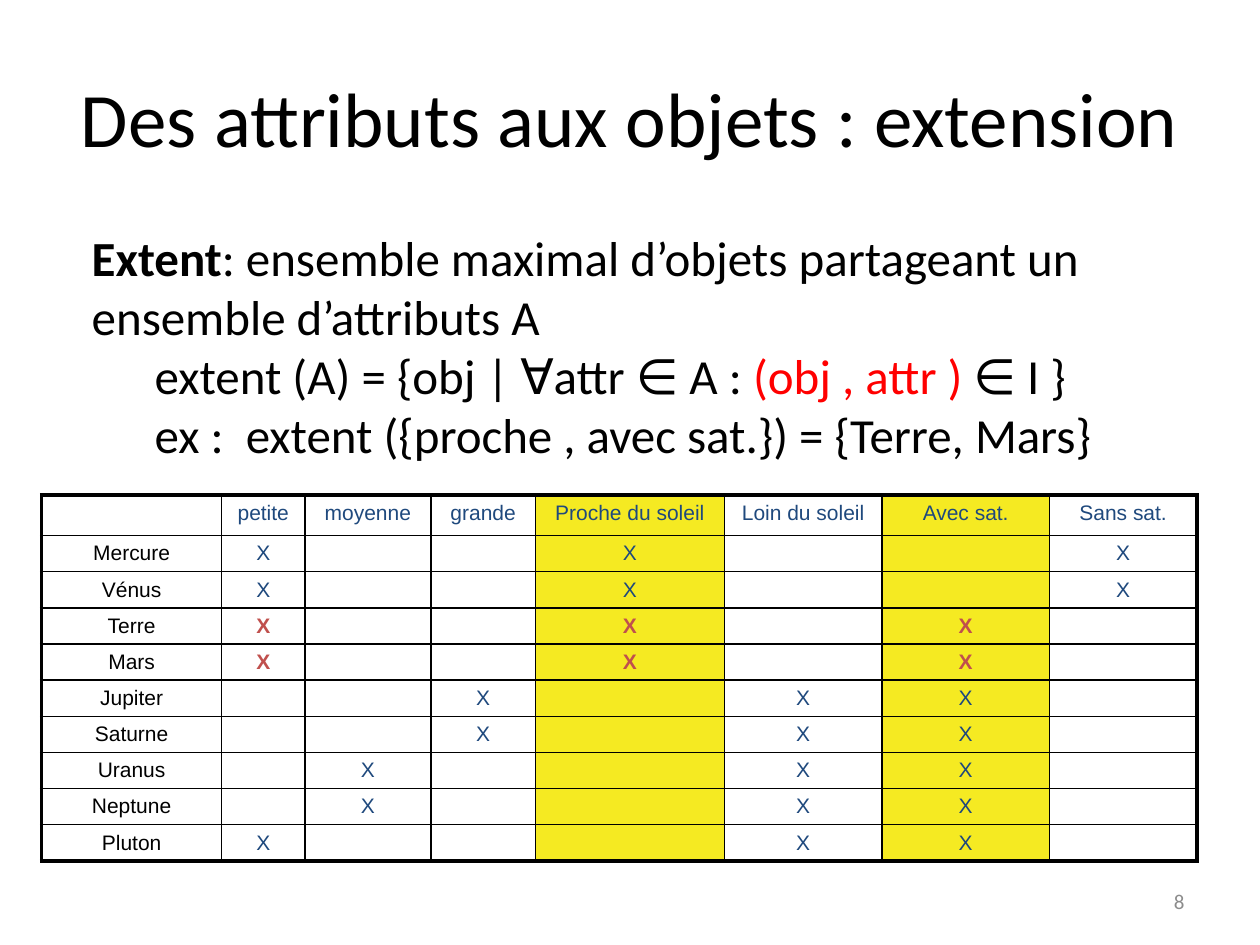
"""Build the slide on extension: from attributes to objects."""
from dataclasses import dataclass

from lxml import etree
from pptx import Presentation
from pptx.dml.color import RGBColor
from pptx.enum.text import MSO_ANCHOR, MSO_AUTO_SIZE, PP_ALIGN
from pptx.oxml.ns import qn
from pptx.util import Inches, Pt

LEFT, CENTER, RIGHT = PP_ALIGN.LEFT, PP_ALIGN.CENTER, PP_ALIGN.RIGHT
TOP, MIDDLE = MSO_ANCHOR.TOP, MSO_ANCHOR.MIDDLE
GROW, FIXED = MSO_AUTO_SIZE.SHAPE_TO_FIT_TEXT, MSO_AUTO_SIZE.NONE


@dataclass(frozen=True)
class Theme:
    """Colours, fonts, type sizes and line widths."""
    text: str = "000000"
    attribute: str = "1F497D"
    match: str = "C0504D"
    accent: str = "FF0000"
    muted: str = "8C8C8C"
    highlight: str = "F5EA22"
    font: str = "Calibri"
    table_font: str = "Arial"
    title_size: int = 44
    body_size: int = 28
    small_size: int = 12
    thin: float = 1
    thick: float = 2.25


ATTRIBUTES = ["petite", "moyenne", "grande", "Proche du soleil",
              "Loin du soleil", "Avec sat.", "Sans sat."]
QUERY = {"Proche du soleil", "Avec sat."}
COLUMN_WIDTHS = [1.43, 0.66, 1, 0.83, 1.5, 1.25, 1.33, 1.17]
HEADER_HEIGHT, ROW_HEIGHT = 0.32, 0.26
PLANETS = {
    "Mercure": {"petite", "Proche du soleil", "Sans sat."},
    "Vénus": {"petite", "Proche du soleil", "Sans sat."},
    "Terre": {"petite", "Proche du soleil", "Avec sat."},
    "Mars": {"petite", "Proche du soleil", "Avec sat."},
    "Jupiter": {"grande", "Loin du soleil", "Avec sat."},
    "Saturne": {"grande", "Loin du soleil", "Avec sat."},
    "Uranus": {"moyenne", "Loin du soleil", "Avec sat."},
    "Neptune": {"moyenne", "Loin du soleil", "Avec sat."},
    "Pluton": {"petite", "Loin du soleil", "Avec sat."},
}


class SlideBuilder:
    """Draw text and tables on one slide in one theme."""

    def __init__(self, slide, theme):
        self.s = slide
        self.theme = theme

    def run(self, p, text, size, color=None, bold=False, font=None):
        """Append one styled run to a paragraph."""
        r = p.add_run()
        r.text = text
        r.font.name = font or self.theme.font
        r.font.size = Pt(size)
        r.font.bold = bold
        r.font.color.rgb = RGBColor.from_string(color or self.theme.text)

    def text(self, box, paragraphs, size, align=LEFT, anchor=MIDDLE, auto_size=FIXED):
        """Add a text box from (indent, runs) paragraphs."""
        tf = self.s.shapes.add_textbox(*map(Inches, box)).text_frame
        tf.word_wrap = True
        tf.auto_size = auto_size
        tf.vertical_anchor = anchor
        for i, (indent, runs) in enumerate(paragraphs):
            p = tf.add_paragraph() if i else tf.paragraphs[0]
            p.alignment = align
            if indent:
                p.level = 1
                p._p.get_or_add_pPr().set("marL", str(Inches(indent)))
                p._p.get_or_add_pPr().set("indent", "0")
            for text, color, bold in runs:
                self.run(p, text, size, color, bold)

    def borders(self, cell, widths):
        """Set the left, right, top and bottom borders of a cell."""
        tc_pr = cell._tc.get_or_add_tcPr()
        for i, (side, width) in enumerate(zip("LRTB", widths)):
            ln = etree.Element(qn(f"a:ln{side}"), w=str(Pt(width)))
            fill = etree.SubElement(ln, qn("a:solidFill"))
            etree.SubElement(fill, qn("a:srgbClr"), val=self.theme.text)
            tc_pr.insert(i, ln)

    def cell(self, cell, text, color, bold, highlighted):
        """Fill one table cell and write its centred text."""
        t = self.theme
        if highlighted:
            cell.fill.solid()
            cell.fill.fore_color.rgb = RGBColor.from_string(t.highlight)
        else:
            cell.fill.background()
        p = cell.text_frame.paragraphs[0]
        p.alignment = CENTER
        if text:
            self.run(p, text, t.small_size, color, bold, t.table_font)
        else:
            end = etree.SubElement(p._p, qn("a:endParaRPr"), sz=str(t.small_size * 100))
            etree.SubElement(end, qn("a:latin"), typeface=t.table_font)

    def context_table(self, box, attributes, planets, query):
        """Add the cross table, with the queried attributes and their extent marked."""
        t = self.theme
        rows, cols = len(planets) + 1, len(attributes) + 1
        table = self.s.shapes.add_table(rows, cols, *map(Inches, box)).table
        table.first_row = table.horz_banding = False
        for column, width in zip(table.columns, COLUMN_WIDTHS):
            column.width = Inches(width)
        for i, row in enumerate(table.rows):
            row.height = Inches(ROW_HEIGHT if i else HEADER_HEIGHT)

        lines = [(["", *attributes], t.attribute, False)]
        for planet, owned in planets.items():
            marks = ["X" if a in owned else "" for a in attributes]
            found = query <= owned
            lines.append(([planet, *marks], t.match if found else t.attribute, found))

        for i, (texts, color, bold) in enumerate(lines):
            for j, text in enumerate(texts):
                cell = table.cell(i, j)
                is_name = j == 0
                self.cell(cell, text, t.text if is_name else color,
                          bold and not is_name,
                          not is_name and attributes[j - 1] in query)
                outer = (j == 0, j == cols - 1, i == 0, i == rows - 1)
                self.borders(cell, [t.thick if edge else t.thin for edge in outer])


def main():
    """Create the presentation and save it."""
    prs = Presentation()
    prs.slide_width, prs.slide_height = Inches(10), Inches(7.5)
    t = Theme()
    b = SlideBuilder(prs.slides.add_slide(prs.slide_layouts[6]), t)

    b.text((0.5, 0.3, 9, 1.25),
           [(0, [("Des attributs aux objets : extension", t.text, False)])],
           t.title_size, CENTER)
    b.context_table((0.33, 3.93, 9.17, 3.02), ATTRIBUTES, PLANETS, QUERY)
    b.text((7.17, 6.95, 2.33, 0.4), [(0, [("8", t.muted, False)])],
           t.small_size, RIGHT)
    b.text((0.63, 1.76, 8.67, 1.99), [
        (0, [("Extent", t.text, True),
             (": ensemble maximal d’objets partageant un ensemble d’attributs A",
              t.text, False)]),
        (0.5, [("extent (A) = {obj | ∀attr ∈ A : ", t.text, False),
               ("(obj , attr )", t.accent, False),
               (" ∈ I }", t.text, False)]),
        (0.5, [("ex :  extent ({proche , avec sat.}) = {Terre, Mars}", t.text, False)]),
    ], t.body_size, anchor=TOP, auto_size=GROW)

    prs.save("out.pptx")


if __name__ == "__main__":
    main()
